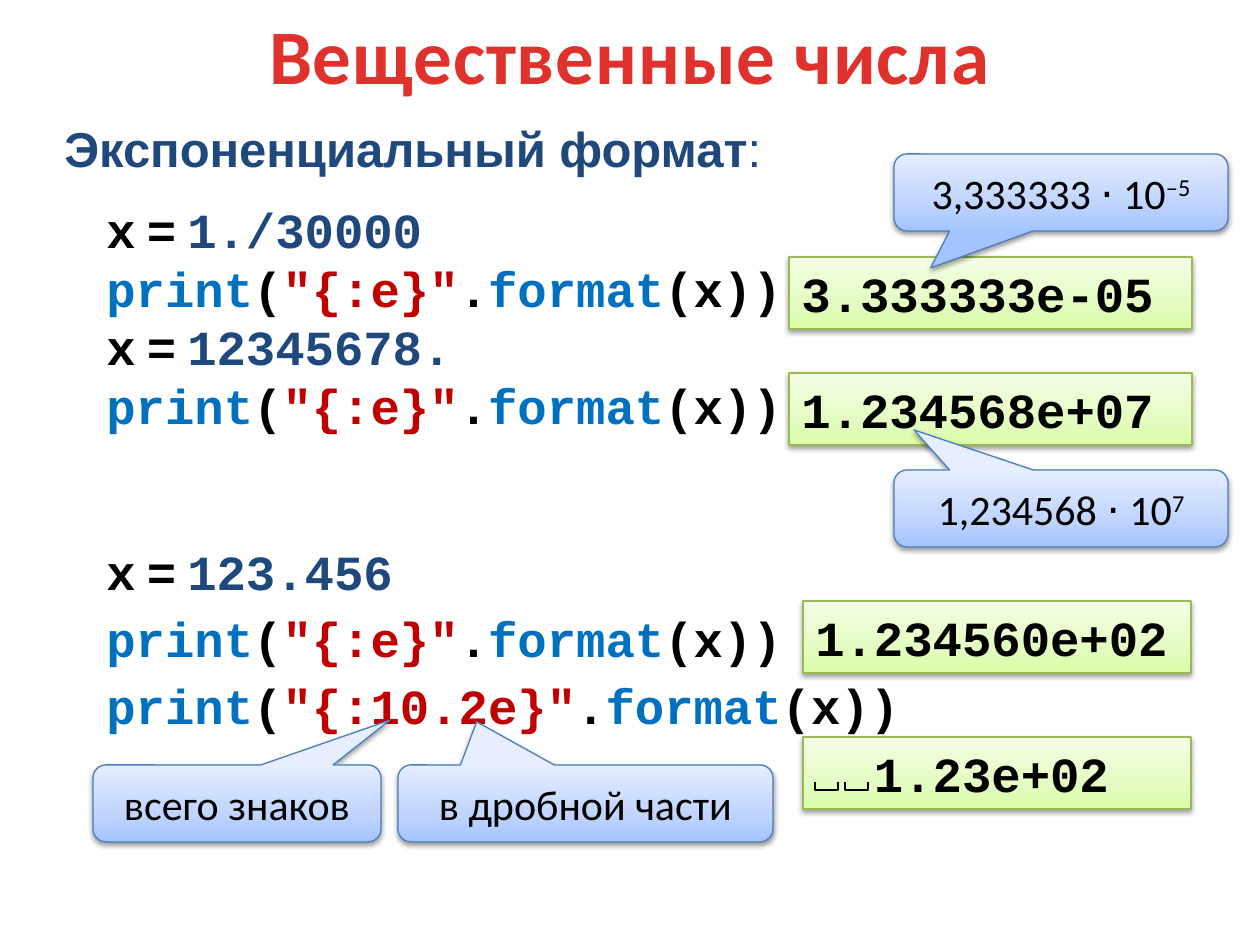
from lxml.etree import SubElement
from pptx import Presentation
from pptx.dml.color import RGBColor
from pptx.enum.shapes import MSO_SHAPE
from pptx.enum.text import MSO_ANCHOR, PP_ALIGN
from pptx.oxml import parse_xml
from pptx.oxml.ns import nsdecls, qn
from pptx.util import Emu, Pt

SCALE = 914400 / 126
BLACK = RGBColor(0x00, 0x00, 0x00)
NAVY = RGBColor(0x1F, 0x49, 0x7D)
BLUE = RGBColor(0x00, 0x70, 0xC0)
CRIMSON = RGBColor(0xC0, 0x00, 0x00)
RED = RGBColor(0xE0, 0x32, 0x2D)
GREEN_LINE = RGBColor(0x98, 0xB9, 0x55)
BLUE_LINE = RGBColor(0x4B, 0x7E, 0xBC)
GREEN_STOPS = {0: "DAFDA7", 35: "E4FCC2", 100: "F5FFE7"}
BLUE_STOPS = {0: "A4C4FF", 35: "BFD4FF", 100: "E6EEFF"}

CODE = {"name": "Courier New", "size": Pt(28), "bold": True}
NOTE = {"name": "Calibri", "size": Pt(24), "bold": False}


def write(box, lines, font, anchor=MSO_ANCHOR.TOP, align=PP_ALIGN.LEFT, spacing=1.0):
    """Fill a box with lines, each a list of (text, format changes)."""
    frame = box.text_frame
    frame.word_wrap = True
    frame.vertical_anchor = anchor
    for index, line in enumerate(lines):
        para = frame.paragraphs[0] if index == 0 else frame.add_paragraph()
        para.alignment = align
        para.line_spacing = spacing
        for text, changes in line:
            span = para.add_run()
            span.text = text
            style = {"color": BLACK, **font, **changes}
            span.font.color.rgb = style.pop("color")
            for name in ("baseline", "spc"):
                if name in style:
                    span._r.get_or_add_rPr().set(name, str(style.pop(name)))
            for name, value in style.items():
                setattr(span.font, name, value)


def add_panel(kind, area, stops, line_color):
    """Add a shape with a vertical gradient, a thin line and a soft shadow."""
    panel = page.shapes.add_shape(kind, *[Emu(round(v * SCALE)) for v in area])
    panel.line.color.rgb = line_color
    panel.line.width = Pt(0.75)
    panel.shadow.inherit = False
    properties = panel._element.spPr
    marks = "".join(
        f'<a:gs pos="{pos * 1000}"><a:srgbClr val="{color}"/></a:gs>'
        for pos, color in stops.items()
    )
    properties.find(qn("a:prstGeom")).addnext(parse_xml(
        f'<a:gradFill {nsdecls("a")} rotWithShape="1"><a:gsLst>{marks}</a:gsLst>'
        '<a:lin ang="16200000" scaled="0"/></a:gradFill>'))
    shadow = SubElement(properties.find(qn("a:effectLst")), qn("a:outerShdw"),
                        blurRad=str(Pt(3.1)), dist=str(Pt(1.6)), dir="5400000", rotWithShape="0")
    color = SubElement(shadow, qn("a:srgbClr"), val="000000")
    SubElement(color, qn("a:alpha"), val="38000")
    return panel


deck = Presentation()
deck.slide_width = Emu(round(1260 * SCALE))
deck.slide_height = Emu(round(945 * SCALE))
page = deck.slides.add_slide(deck.slide_layouts[6])

# Headings and code listings
narrow_space = (" ", {"name": "Calibri"})
assign = [("x", {}), narrow_space, ("=", {}), narrow_space]
print_e, print_width = [
    [("print", {"color": BLUE}), ("(", {}), (pattern, {"color": CRIMSON}),
     (".", {}), ("format", {"color": BLUE}), ("(x))", {})]
    for pattern in ('"{:e}"', '"{:10.2e}"')
]
first_code = [
    assign + [("1./30000", {"color": NAVY})],
    print_e,
    assign + [("12345678.", {"color": NAVY})],
    print_e,
]
second_code = [assign + [("123.456", {"color": NAVY})], print_e, print_width]
heading = [("Экспоненциальный формат", {"bold": True}), (":", {})]
heading_font = {"name": "Arial", "size": Pt(28), "color": NAVY, "bold": False}
title_font = {"name": "Calibri", "size": Pt(44), "color": RED, "bold": True, "spc": 50}

for area, lines, font, options in [
    ((52, 112, 733, 72), [heading], heading_font, {}),
    ((94, 193, 828, 251), first_code, CODE, {}),
    ((94, 527, 837, 215), second_code, CODE, {"align": PP_ALIGN.JUSTIFY, "spacing": 1.14}),
    ((0, 0, 1260, 107), [[("Вещественные числа", {})]], title_font,
     {"anchor": MSO_ANCHOR.MIDDLE, "align": PP_ALIGN.CENTER}),
]:
    box = page.shapes.add_textbox(*[Emu(round(v * SCALE)) for v in area])
    write(box, lines, font, **options)

# Program output
for left, top, width, text in [
    (789, 257, 403, "3.333333e-05"),
    (789, 373, 403, "1.234568e+07"),
    (803, 601, 388, "1.234560e+02"),
    (803, 737, 388, "  1.23e+02"),
]:
    panel = add_panel(MSO_SHAPE.RECTANGLE, (left, top, width, 72), GREEN_STOPS, GREEN_LINE)
    write(panel, [[(text, {})]], CODE)

# Brackets marking the two padding spaces
for left in (815, 845):
    builder = page.shapes.build_freeform(left, 782, scale=SCALE)
    builder.add_line_segments([(left, 790), (left + 23, 790), (left + 23, 782)], close=False)
    bracket = builder.convert_to_shape()
    bracket.fill.background()
    bracket.line.color.rgb = BLACK
    bracket.line.width = Pt(1)
    bracket.shadow.inherit = False

# Callouts
raised = {"baseline": 30000}
for left, top, width, tip, line in [
    (894, 154, 334, (-0.39, 0.98), [("3,333333 ⋅ 10", {}), ("–5", raised)]),
    (894, 470, 334, (-0.44, -1.02), [("1,234568 ⋅ 10", {}), ("7", raised)]),
    (93, 765, 288, (0.53, -1.08), [("всего знаков", {})]),
    (398, 765, 375, (-0.29, -1.06), [("в дробной части", {})]),
]:
    callout = add_panel(MSO_SHAPE.ROUNDED_RECTANGULAR_CALLOUT, (left, top, width, 77),
                        BLUE_STOPS, BLUE_LINE)
    for index, value in enumerate((*tip, 0.17)):
        callout.adjustments[index] = value
    write(callout, [line], NOTE, MSO_ANCHOR.MIDDLE, PP_ALIGN.CENTER)

deck.save("out.pptx")
